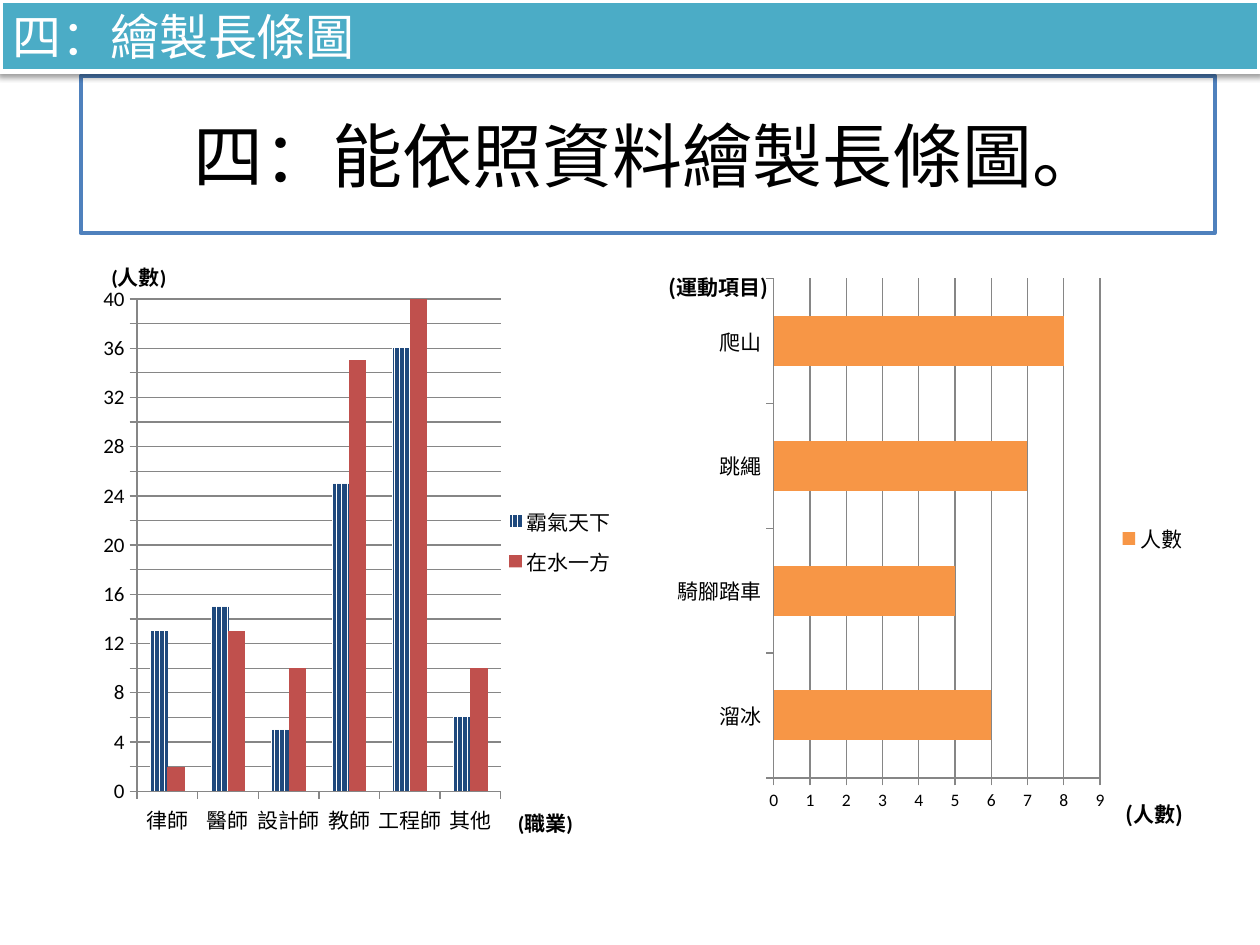
from dataclasses import dataclass
from typing import NamedTuple, Optional

from lxml.etree import SubElement
from pptx import Presentation
from pptx.chart.data import CategoryChartData
from pptx.dml.color import RGBColor
from pptx.enum.chart import XL_CHART_TYPE, XL_LEGEND_POSITION, XL_TICK_MARK
from pptx.enum.dml import MSO_PATTERN
from pptx.enum.shapes import MSO_SHAPE
from pptx.enum.text import MSO_ANCHOR, PP_ALIGN
from pptx.oxml import parse_xml
from pptx.oxml.ns import nsdecls, qn
from pptx.util import Inches, Pt


class Box(NamedTuple):
    left: float
    top: float
    width: float
    height: float


class Label(NamedTuple):
    text: str
    left: float
    top: float
    font: str


class Series(NamedTuple):
    name: str
    vals: list[int]
    color: str
    striped: bool = False


@dataclass(frozen=True)
class Theme:
    font: str = "Calibri"
    cjk: str = "Noto Sans CJK SC"
    ink: str = "000000"
    paper: str = "FFFFFF"
    band: str = "4BACC6"
    frame: str = "4F81BD"
    grid: str = "868686"
    navy: str = "1F497D"
    red: str = "C0504D"
    orange: str = "F79646"
    head: int = 40
    sub: int = 28
    label: int = 12
    small: int = 10


@dataclass(frozen=True)
class Graph:
    kind: XL_CHART_TYPE
    box: Box
    plot: Box
    legend: Box
    cats: list[str]
    series: list[Series]
    value: Label
    category: Optional[Label] = None
    title: Optional[Label] = None
    top: Optional[int] = None
    step: Optional[int] = None
    ticks: int = 12
    key_font: str = "Calibri"


THEME = Theme()
WIDE, HIGH = Inches(10), Inches(7.5)


def area(box: Box) -> list[int]:
    return [round(part * size / 100) for part, size in zip(box, (WIDE, HIGH) * 2)]


def style(font, size: int, color: str = THEME.ink, name: str = THEME.font) -> None:
    font.size = Pt(size)
    font.name = name
    font.color.rgb = RGBColor.from_string(color)


def paint(fill, color: str) -> None:
    fill.solid()
    fill.fore_color.rgb = RGBColor.from_string(color)


def stroke(line, color: str, width: float) -> None:
    paint(line.fill, color)
    line.width = Pt(width)


def write(frame, text: str, size: int, color: str = THEME.ink, name: str = THEME.font):
    run = frame.paragraphs[0].add_run()
    run.text = text
    style(run.font, size, color, name)
    return run


def place(node, index: int, spots: dict[str, float], inner: bool = False) -> None:
    for old in node.findall(qn("c:layout")):
        node.remove(old)
    layout = parse_xml(f"<c:layout {nsdecls('c')}><c:manualLayout/></c:layout>")
    manual = layout[0]
    if inner:
        SubElement(manual, qn("c:layoutTarget")).set("val", "inner")
    for axis in ("x", "y"):
        SubElement(manual, qn(f"c:{axis}Mode")).set("val", "edge")
    for name, value in spots.items():
        SubElement(manual, qn(f"c:{name}")).set("val", str(round(value / 100, 4)))
    node.insert(index, layout)


def caption(title, label: Label) -> None:
    frame = title.text_frame
    write(frame, label.text, THEME.label, name=label.font).font.bold = True
    node = title._element
    node.xpath(".//a:bodyPr")[0].set("rot", "0")
    node.xpath(".//a:bodyPr")[0].set("vert", "horz")
    place(node, 1, {"x": label.left, "y": label.top})


def draw(slide, graph: Graph) -> None:
    data = CategoryChartData()
    data.categories = graph.cats
    for item in graph.series:
        data.add_series(item.name, item.vals)
    chart = slide.shapes.add_chart(graph.kind, *area(graph.box), data).chart
    style(chart.font, THEME.small)
    chart.has_title = graph.title is not None
    if graph.title:
        caption(chart.chart_title, graph.title)
    plot = chart.plots[0]
    plot.gap_width = 150
    plot.vary_by_categories = False
    for bars, item in zip(plot.series, graph.series):
        bars.invert_if_negative = False
        fill = bars.format.fill
        if item.striped:
            fill.patterned()
            fill.pattern = MSO_PATTERN.DARK_VERTICAL
            fill.fore_color.rgb = RGBColor.from_string(item.color)
            fill.back_color.rgb = RGBColor.from_string(THEME.paper)
        else:
            paint(fill, item.color)
    axes = (chart.category_axis, graph.category, THEME.label), (
        chart.value_axis, graph.value, graph.ticks)
    for axis, label, size in axes:
        axis.major_tick_mark = XL_TICK_MARK.OUTSIDE
        axis.minor_tick_mark = XL_TICK_MARK.NONE
        style(axis.tick_labels.font, size)
        stroke(axis.format.line, THEME.grid, 0.75)
        if label:
            caption(axis.axis_title, label)
    value = chart.value_axis
    value.has_major_gridlines = True
    stroke(value.major_gridlines.format.line, THEME.grid, 0.75)
    if graph.top:
        value.minimum_scale = 0
        value.maximum_scale = graph.top
        value.major_unit = graph.step
    chart.has_legend = True
    legend = chart.legend
    legend.position = XL_LEGEND_POSITION.RIGHT
    legend.include_in_layout = False
    style(legend.font, THEME.label, name=graph.key_font)
    sides = ("x", "y", "w", "h")
    place(legend._element, 1, dict(zip(sides, graph.legend)))
    region = chart._chartSpace.xpath("c:chart/c:plotArea")[0]
    place(region, 0, dict(zip(sides, graph.plot)), inner=True)


def headline(slide, text: str, box: Box) -> None:
    title = slide.shapes.title
    title.left, title.top, title.width, title.height = area(box)
    stroke(title.line, THEME.frame, 2.25)
    title.text_frame.vertical_anchor = MSO_ANCHOR.MIDDLE
    title.text_frame.paragraphs[0].alignment = PP_ALIGN.CENTER
    write(title.text_frame, text, THEME.head)


def banner(slide, text: str, box: Box) -> None:
    band = slide.shapes.add_shape(MSO_SHAPE.RECTANGLE, *area(box))
    paint(band.fill, THEME.band)
    stroke(band.line, THEME.paper, 3)
    band.shadow.inherit = False
    effects = band._element.spPr.find(qn("a:effectLst"))
    shade = SubElement(effects, qn("a:outerShdw"), blurRad=str(Pt(3.1)),
                       dist=str(Pt(1.6)), dir="5400000", rotWithShape="0")
    color = SubElement(shade, qn("a:srgbClr"), val=THEME.ink)
    SubElement(color, qn("a:alpha"), val="38000")
    band.text_frame.word_wrap = True
    band.text_frame.vertical_anchor = MSO_ANCHOR.MIDDLE
    band.text_frame.paragraphs[0].alignment = PP_ALIGN.LEFT
    write(band.text_frame, text, THEME.sub, THEME.paper)


JOBS = Graph(
    XL_CHART_TYPE.COLUMN_CLUSTERED, Box(5, 23.33, 44.2, 66),
    Box(13.3, 12.8, 65.3, 80.2), Box(78.5, 45, 21.5, 14.5),
    ["律師", "醫師", "設計師", "教師", "工程師", "其他"],
    [Series("霸氣天下", [13, 15, 5, 25, 36, 6], THEME.navy, True),
     Series("在水一方", [2, 13, 10, 35, 40, 10], THEME.red)],
    value=Label("(人數)", 8, 5.5, THEME.font),
    category=Label("(職業)", 81, 94.5, THEME.font), top=40, step=2)
SPORTS = Graph(
    XL_CHART_TYPE.BAR_CLUSTERED, Box(50.8, 23.33, 44.2, 66),
    Box(24, 9.3, 58.6, 80.1), Box(84.5, 47, 15, 8),
    ["溜冰", "騎腳踏車", "跳繩", "爬山"],
    [Series("人數", [6, 5, 7, 8], THEME.orange)],
    value=Label("(人數)", 86.5, 91.5, THEME.cjk),
    title=Label("(運動項目)", 4.5, 7, THEME.cjk),
    ticks=THEME.small, key_font=THEME.cjk)


def main() -> None:
    deck = Presentation()
    deck.slide_width, deck.slide_height = WIDE, HIGH
    slide = deck.slides.add_slide(deck.slide_layouts[5])
    headline(slide, "四：能依照資料繪製長條圖。", Box(6.4, 8, 90, 16.67))
    for graph in (JOBS, SPORTS):
        draw(slide, graph)
    banner(slide, "四：繪製長條圖", Box(0, 0, 100, 7.6))
    deck.save("out.pptx")


if __name__ == "__main__":
    main()
